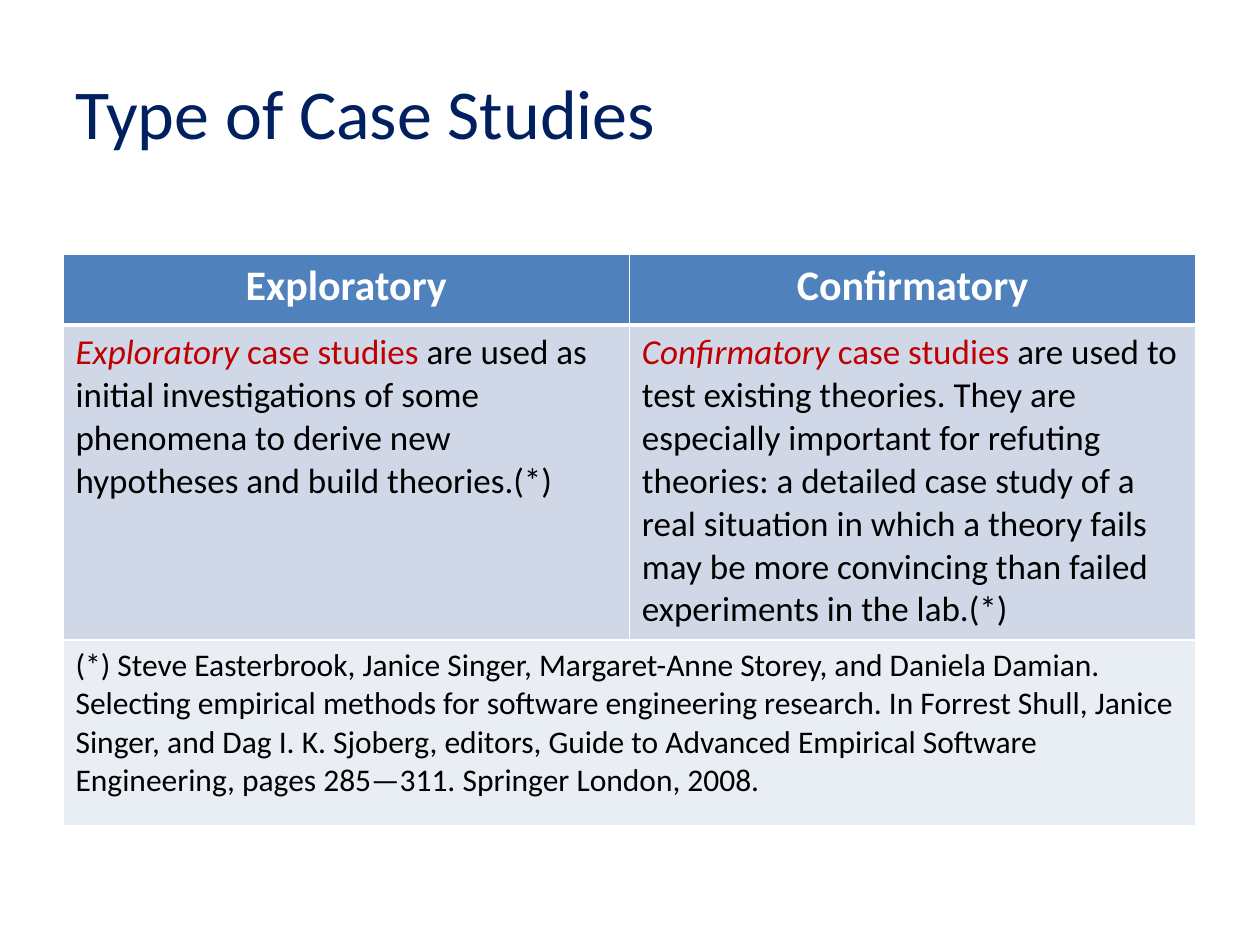
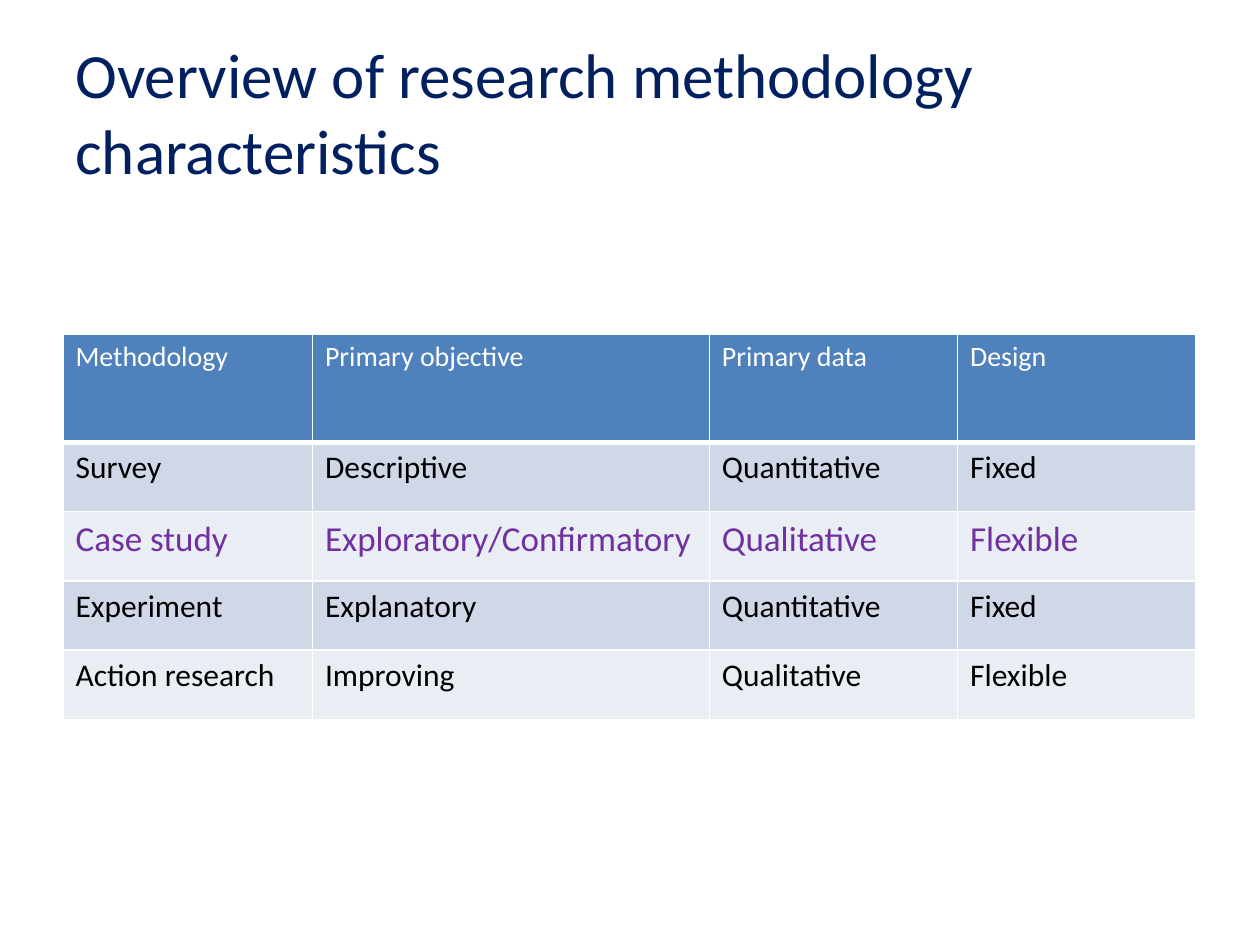
from lxml import etree
from pptx import Presentation
from pptx import util as u
from pptx.dml.color import RGBColor
from pptx.enum import text
from pptx.oxml import ns

FONT = "Calibri"
NAVY, WHITE, BLACK = "002060", "FFFFFF", "000000"
RED, PURPLE = "C00000", "7030A0"
HEADER, DARK_BAND, LIGHT_BAND = "4F81BD", "D0D8E8", "E9EDF4"
LEFT, WIDTH = 0.5, 8.99


def color(hex_code):
    return RGBColor.from_string(hex_code)


def add_borders(cell, widths):
    """Draw white cell borders; widths maps side letters to points."""
    properties = cell._tc.get_or_add_tcPr()
    for position, (side, width) in enumerate(widths.items()):
        line = etree.Element(ns.qn(f"a:ln{side}"), w=str(u.Pt(width)))
        fill = etree.SubElement(line, ns.qn("a:solidFill"))
        etree.SubElement(fill, ns.qn("a:srgbClr"), val=WHITE)
        properties.insert(position, line)


# Each row: height, text size, text colour, cells; a cell lists its (text, colour, italic) spans
case_types = [
    (0.56, 24, WHITE, [[("Exploratory", WHITE, False)], [("Confirmatory", WHITE, False)]]),
    (2.5, 20, BLACK, [
        [("Exploratory ", RED, True), ("case studies ", RED, False),
         ("are used as initial investigations of some phenomena to derive new "
          "hypotheses and build theories.(*)", BLACK, False)],
        [("Confirmatory ", RED, True), ("case studies ", RED, False),
         ("are used to test existing theories. They are especially important for "
          "refuting theories: a detailed case study of a real situation in which a "
          "theory fails may be more convincing than failed experiments in the lab.(*)",
          BLACK, False)],
    ]),
    (1.47, 18, BLACK, [[
        ("(*) Steve Easterbrook, Janice Singer, Margaret-Anne Storey, and Daniela Damian. "
         "Selecting empirical methods for software engineering research. In Forrest Shull, "
         "Janice Singer, and Dag I. K. Sjoberg, editors, Guide to Advanced Empirical Software "
         "Engineering, pages 285—311. Springer London, 2008.", BLACK, False)]]),
]

methods = [
    (0.86, 16, WHITE, ["Methodology", "Primary objective", "Primary data", "Design"]),
    (0.55, 18, BLACK, ["Survey", "Descriptive", "Quantitative", "Fixed"]),
    (0.55, 20, PURPLE, ["Case study", "Exploratory/Confirmatory", "Qualitative", "Flexible"]),
    (0.55, 18, BLACK, ["Experiment", "Explanatory", "Quantitative", "Fixed"]),
    (0.55, 18, BLACK, ["Action research", "Improving", "Qualitative", "Flexible"]),
]
methods = [(height, size, ink, [[(label, ink, False)] for label in labels])
           for height, size, ink, labels in methods]

# Each page: title, title size, table top, column widths, centred bold header, rows
pages = [
    ("Type of Case Studies", 40, 2.02, [WIDTH / 2] * 2, True, case_types),
    ("Overview of research methodology characteristics", 36, 2.65,
     [1.98, 3.15, 1.97, 1.89], False, methods),
]

deck = Presentation()
deck.slide_width, deck.slide_height = u.Inches(10), u.Inches(7.5)

for title, title_size, top, columns, strong_header, rows in pages:
    page = deck.slides.add_slide(deck.slide_layouts[6])

    # Title
    box = page.shapes.add_textbox(u.Inches(LEFT), u.Inches(0.3), u.Inches(WIDTH), u.Inches(1.17))
    frame = box.text_frame
    frame.word_wrap = True
    frame.vertical_anchor = text.MSO_ANCHOR.MIDDLE
    para = frame.paragraphs[0]
    para.text = title
    para.font.name, para.font.size = FONT, u.Pt(title_size)
    para.font.color.rgb = color(NAVY)

    # Table grid
    total_height = sum(row[0] for row in rows)
    table = page.shapes.add_table(len(rows), len(columns), u.Inches(LEFT), u.Inches(top),
                                  u.Inches(WIDTH), u.Inches(total_height)).table
    for column, width in zip(table.columns, columns):
        column.width = u.Inches(width)

    # Table cells
    for row_index, (height, size, ink, cells) in enumerate(rows):
        table.rows[row_index].height = u.Inches(height)
        is_header = row_index == 0
        band = HEADER if is_header else (DARK_BAND if row_index % 2 else LIGHT_BAND)
        for cell in table.rows[row_index].cells:
            cell.fill.solid()
            cell.fill.fore_color.rgb = color(band)
            add_borders(cell, {"L": 1, "R": 1, "T": 3 if row_index == 1 else 1,
                               "B": 3 if is_header else 1})
        if len(cells) < len(columns):
            table.cell(row_index, 0).merge(table.cell(row_index, len(columns) - 1))
        for column_index, spans in enumerate(cells):
            para = table.cell(row_index, column_index).text_frame.paragraphs[0]
            if is_header and strong_header:
                para.alignment = text.PP_ALIGN.CENTER
            para.font.name, para.font.size = FONT, u.Pt(size)
            para.font.bold = is_header and strong_header
            para.font.color.rgb = color(ink)
            for words, span_ink, italic in spans:
                span = para.add_run()
                span.text = words
                if span_ink != ink:
                    span.font.color.rgb = color(span_ink)
                if italic:
                    span.font.italic = True

deck.save("out.pptx")
